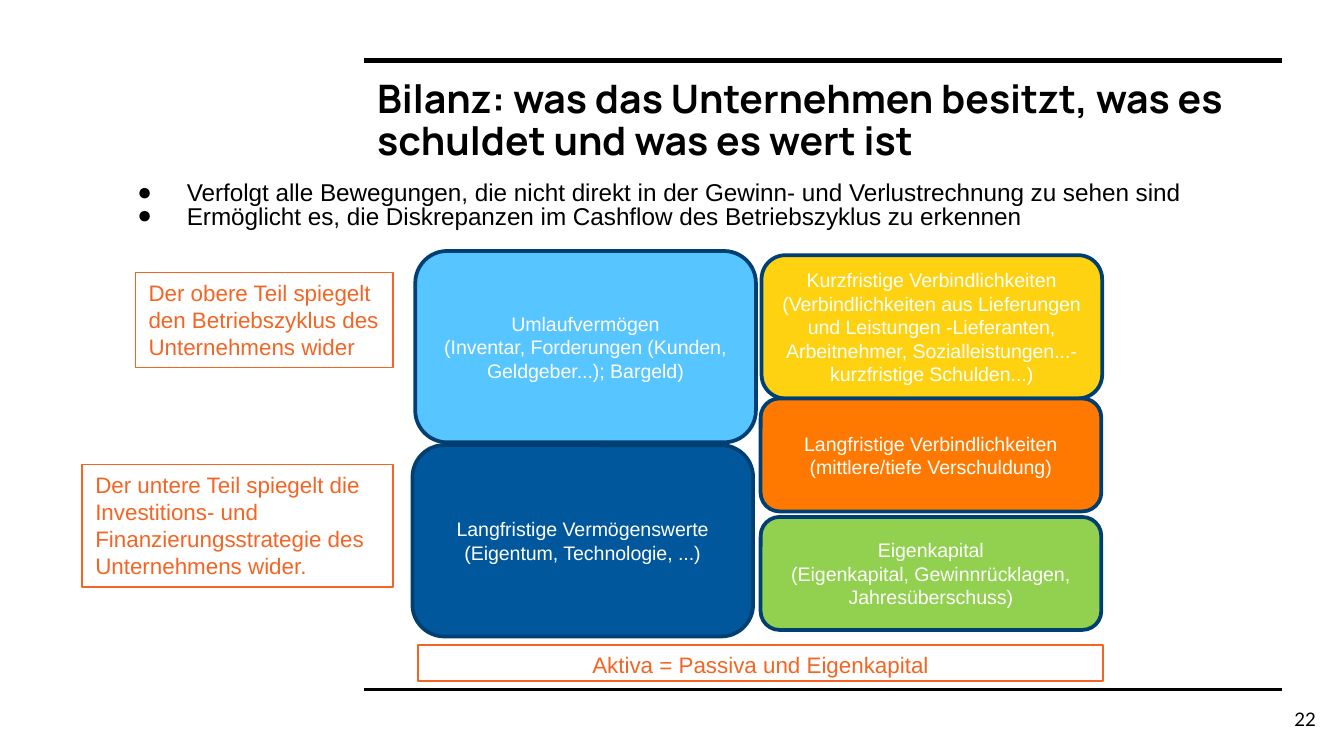
import pptx
import pptx.util
import pptx.dml.color
import pptx.enum.shapes
import pptx.enum.text
import pptx.oxml.ns
import lxml.etree

Pt = pptx.util.Pt
ALIGN = pptx.enum.text.PP_ALIGN
ANCHOR = pptx.enum.text.MSO_ANCHOR
SHAPE = pptx.enum.shapes.MSO_SHAPE
qn = pptx.oxml.ns.qn

BLACK, WHITE, ORANGE, NAVY = "000000", "FFFFFF", "F46524", "003F71"
TITLE = "Bilanz: was das Unternehmen besitzt, was es schuldet und was es wert ist"
BULLETS = [
    "Verfolgt alle Bewegungen, die nicht direkt in der Gewinn- und Verlustrechnung zu sehen sind",
    "Ermöglicht es, die Diskrepanzen im Cashflow des Betriebszyklus zu erkennen",
]
NOTES = [
    ("Aktiva = Passiva und Eigenkapital", (224, 345.5, 367, 19.5), ALIGN.CENTER),
    ("Der untere Teil spiegelt die Investitions- und Finanzierungsstrategie des Unternehmens wider.",
     (44, 249, 166.5, 65.5), ALIGN.LEFT),
    ("Der obere Teil spiegelt den Betriebszyklus des Unternehmens wider",
     (72.5, 146, 138, 51), ALIGN.LEFT),
]
BLOCK_W = 182.5
BLOCKS = [
    ("Umlaufvermögen", "(Inventar, Forderungen (Kunden, Geldgeber...); Bargeld)",
     "57C5FF", 222.5, 134.5, 102.5),
    ("Langfristige Vermögenswerte", "(Eigentum, Technologie, ...)",
     "01579B", 221, 238.5, 102.5),
    ("Kurzfristige Verbindlichkeiten",
     "(Verbindlichkeiten aus Lieferungen und Leistungen -Lieferanten, Arbeitnehmer, "
     "Sozialleistungen...- kurzfristige Schulden...)",
     "FED211", 408, 136.75, 76.75),
    ("Langfristige Verbindlichkeiten", "(mittlere/tiefe Verschuldung)",
     "FF7900", 407.5, 213.5, 60.5),
    ("Eigenkapital", "(Eigenkapital, Gewinnrücklagen, Jahresüberschuss)",
     "92D050", 407.5, 277, 60.5),
]
RULES = [(32.5, 3), (369.25, 1.5)]
RULE_LEFT, RULE_RIGHT = 195, 687


def rgb(color):
    return pptx.dml.color.RGBColor.from_string(color)


def write(sp, lines, size, color, font="Arial", bold=False, align=ALIGN.LEFT,
          anchor=ANCHOR.TOP, inset=3.6, spacing=None):
    tf = sp.text_frame
    tf.word_wrap = True
    tf.vertical_anchor = anchor
    tf.margin_left = tf.margin_right = Pt(7.2)
    tf.margin_top = tf.margin_bottom = Pt(inset)
    for i, line in enumerate(lines):
        p = tf.add_paragraph() if i else tf.paragraphs[0]
        p.alignment = align
        if spacing:
            p.line_spacing = spacing
        r = p.add_run()
        r.text = line
        r.font.name, r.font.size, r.font.bold = font, Pt(size), bold
        r.font.color.rgb = rgb(color)
    return tf


def text_box(s, box, lines, size, **style):
    sp = s.shapes.add_textbox(*map(Pt, box))
    return write(sp, lines, size, BLACK, inset=7.2, **style)


def outlined(s, kind, box, line, width, fill=None):
    sp = s.shapes.add_shape(kind, *map(Pt, box))
    sp.shadow.inherit = False
    if fill:
        sp.fill.solid()
        sp.fill.fore_color.rgb = rgb(fill)
    else:
        sp.fill.background()
    sp.line.color.rgb = rgb(line)
    sp.line.width = Pt(width)
    return sp


def add_bullet(p):
    pPr = p._p.get_or_add_pPr()
    pPr.set("marL", str(Pt(36)))
    pPr.set("indent", str(Pt(-26.5)))
    clr = lxml.etree.SubElement(pPr, qn("a:buClr"))
    lxml.etree.SubElement(clr, qn("a:srgbClr"), val=BLACK)
    lxml.etree.SubElement(pPr, qn("a:buFont"), typeface="Arial")
    lxml.etree.SubElement(pPr, qn("a:buChar"), char="●")


def main():
    prs = pptx.Presentation()
    prs.slide_width, prs.slide_height = Pt(720), Pt(405)
    s = prs.slides.add_slide(prs.slide_layouts[6])

    text_box(s, (195, 35.5, 517, 50.5), [TITLE], 21, font="Manrope", bold=True, spacing=0.9)
    tf = text_box(s, (57, 91, 600, 40), BULLETS, 13, spacing=0.8)
    for p in tf.paragraphs:
        add_bullet(p)

    for text, box, align in NOTES:
        sp = outlined(s, SHAPE.RECTANGLE, box, ORANGE, 0.75)
        write(sp, [text], 12, ORANGE, align=align)

    for name, detail, fill, x, y, h in BLOCKS:
        sp = outlined(s, SHAPE.ROUNDED_RECTANGLE, (x, y, BLOCK_W, h), NAVY, 2, fill)
        write(sp, [name, detail], 10.5, WHITE, align=ALIGN.CENTER, anchor=ANCHOR.MIDDLE)

    for y, width in RULES:
        ln = s.shapes.add_connector(pptx.enum.shapes.MSO_CONNECTOR.STRAIGHT,
                                    Pt(RULE_LEFT), Pt(y), Pt(RULE_RIGHT), Pt(y))
        ln.line.color.rgb = rgb(BLACK)
        ln.line.width = Pt(width)
        lxml.etree.SubElement(ln._element.spPr, qn("a:effectLst"))

    text_box(s, (669, 369.5, 43, 31), ["22"], 10, font="Lato",
             align=ALIGN.RIGHT, anchor=ANCHOR.MIDDLE)
    prs.save("out.pptx")


if __name__ == "__main__":
    main()
